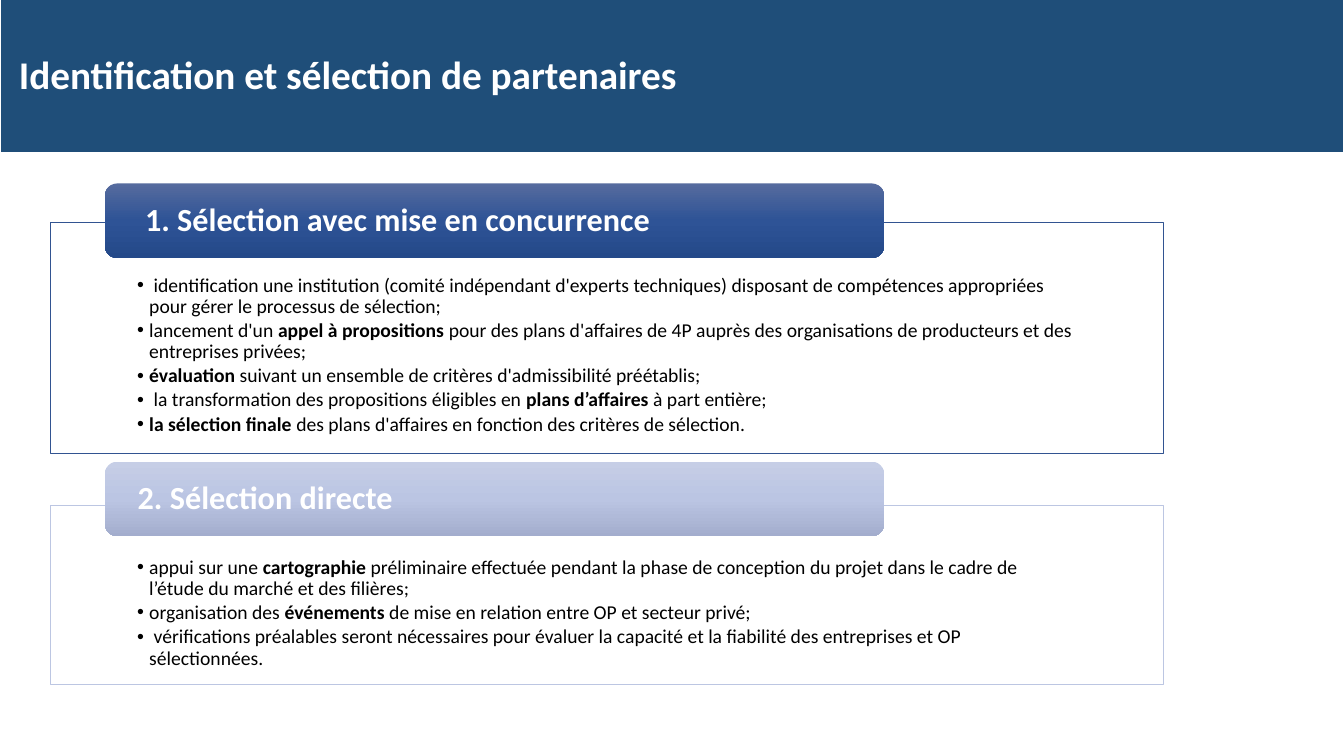
from copy import deepcopy

from pptx import Presentation
from pptx.dml.color import RGBColor
from pptx.enum.shapes import MSO_SHAPE
from pptx.enum.text import MSO_ANCHOR, MSO_AUTO_SIZE, PP_ALIGN
from pptx.oxml.ns import qn
from pptx.util import Inches, Pt

ROUNDED = MSO_SHAPE.ROUNDED_RECTANGLE
TOP, MIDDLE = MSO_ANCHOR.TOP, MSO_ANCHOR.MIDDLE
NO_FIT = MSO_AUTO_SIZE.NONE
LEFT = PP_ALIGN.LEFT

WHITE = RGBColor(0xFF, 0xFF, 0xFF)
BLACK = RGBColor(0, 0, 0)
BANNER = RGBColor(0x1F, 0x4E, 0x79)
DARK_LINE = RGBColor(0x32, 0x54, 0x91)
PALE_LINE = RGBColor(0xBC, 0xC6, 0xE2)
DARK_SHADES = [RGBColor(0x56, 0x6B, 0x9E), RGBColor(0x2E, 0x53, 0x96), RGBColor(0x24, 0x49, 0x89)]
PALE_SHADES = [RGBColor(0xC6, 0xCE, 0xE6), RGBColor(0xBB, 0xC5, 0xE3), RGBColor(0xA3, 0xAD, 0xCD)]

TITLE = [[(" Identification et sélection de partenaires", True)]]
SECTIONS = [
    {
        "heading": [(" ", False), ("1. Sélection avec mise en concurrence", True)],
        "items": [
            [(" identification une institution (comité indépendant d'experts techniques) disposant de "
              "compétences appropriées pour gérer le processus de sélection;", False)],
            [("lancement d'un ", False), ("appel à propositions ", True),
             ("pour des plans d'affaires de 4P auprès des organisations de producteurs et des "
              "entreprises privées;", False)],
            [("évaluation", True), (" suivant un ensemble de critères d'admissibilité préétablis;", False)],
            [(" la transformation des propositions éligibles en ", False), ("plans d’affaires ", True),
             ("à part entière;", False)],
            [("la sélection finale ", True),
             ("des plans d'affaires en fonction des critères de sélection.", False)],
        ],
        "frame_top": 2.21, "frame_height": 2.29, "heading_top": 1.82,
        "line": DARK_LINE, "shades": DARK_SHADES,
    },
    {
        "heading": [("2. Sélection directe", True)],
        "items": [
            [("appui sur une ", False), ("cartographie", True),
             (" préliminaire effectuée pendant la phase de conception du projet dans le cadre de "
              "l’étude du marché et des filières;", False)],
            [("organisation des ", False), ("événements", True),
             (" de mise en relation entre OP et secteur privé;", False)],
            [(" vérifications préalables seront nécessaires pour évaluer la capacité et la fiabilité "
              "des entreprises et OP sélectionnées.", False)],
        ],
        "frame_top": 5.01, "frame_height": 1.78, "heading_top": 4.58,
        "line": PALE_LINE, "shades": PALE_SHADES,
    },
]


def place(box, left, top, width, height):
    box.left, box.top, box.width, box.height = map(Inches, (left, top, width, height))


def paint(box, fill, line, weight):
    box.fill.solid()
    box.fill.fore_color.rgb = fill
    box.line.color.rgb = line
    box.line.width = Pt(weight)


def shade(box, colors):
    box.fill.gradient()
    box.fill.gradient_angle = 270
    stop_list = box._element.spPr.find(".//" + qn("a:gsLst"))
    stop_list.insert(1, deepcopy(stop_list[0]))
    for index, (stop, color) in enumerate(zip(box.fill.gradient_stops, colors)):
        stop.color.rgb = color
        stop.position = index / (len(colors) - 1)


def write(box, paragraphs, size, color, anchor=MIDDLE, insets=(0.1, 0.05, 0.1, 0.05),
          spacing=0.9, after=0, hang=0):
    frame = box.text_frame
    frame.word_wrap = True
    frame.auto_size = NO_FIT
    frame.vertical_anchor = anchor
    frame.margin_left, frame.margin_top, frame.margin_right, frame.margin_bottom = map(Inches, insets)
    for index, spans in enumerate(paragraphs):
        para = frame.paragraphs[0] if index == 0 else frame.add_paragraph()
        para.alignment = LEFT
        para.line_spacing = spacing
        para.space_before = Pt(0)
        para.space_after = Pt(after)
        if hang:
            properties = para._p.get_or_add_pPr()
            properties.set("marL", str(Inches(hang)))
            properties.set("indent", str(-Inches(hang)))
        for text, bold in spans:
            span = para.add_run()
            span.text = text
            span.font.name = "Calibri"
            span.font.size = Pt(size)
            span.font.bold = bold
            span.font.color.rgb = color


def main():
    deck = Presentation()
    deck.slide_width, deck.slide_height = Inches(13.33), Inches(7.5)
    page = deck.slides.add_slide(deck.slide_layouts.get_by_name("Two Content"))
    title, *bodies = [box for box in page.placeholders if box.placeholder_format.idx < 10]

    place(title, 0, -0.06, 13.33, 1.58)
    paint(title, BANNER, WHITE, 1.5)
    write(title, TITLE, 28, WHITE, spacing=1)

    for section, body in zip(SECTIONS, bodies):
        place(body, 0.5, section["frame_top"], 11.04, section["frame_height"])
        paint(body, WHITE, section["line"], 0.5)
        write(body, section["items"], 14, BLACK, anchor=TOP,
              insets=(0.86, 0.52, 0.86, 0.11), after=2.1, hang=0.12)

        heading = page.shapes.add_shape(ROUNDED, 0, 0, 0, 0)
        place(heading, 1.04, section["heading_top"], 7.73, 0.74)
        heading.shadow.inherit = False
        heading.line.fill.background()
        shade(heading, section["shades"])
        write(heading, [section["heading"]], 23, WHITE, insets=(0.29, 0, 0.29, 0))

    deck.save("out.pptx")


if __name__ == "__main__":
    main()
